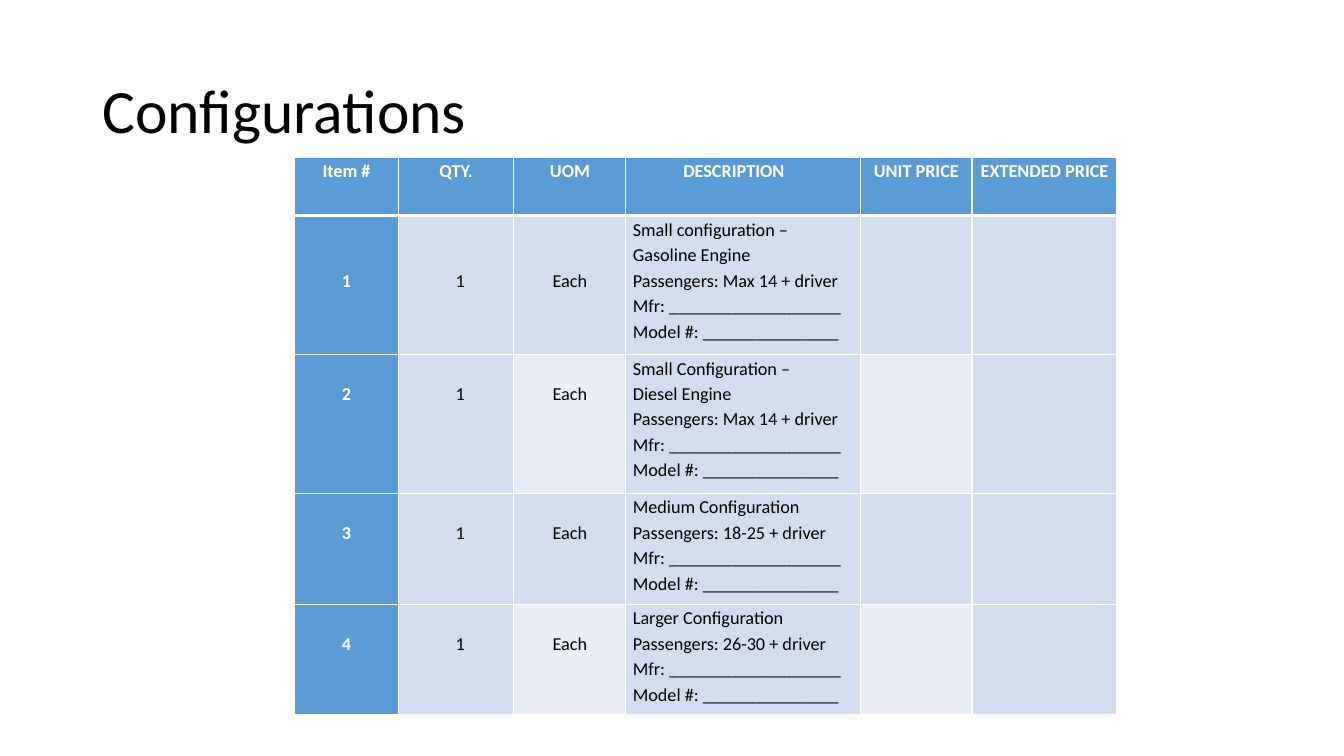
from lxml import etree
from pptx import Presentation
from pptx import util as u
from pptx.dml import color
from pptx.enum import text
from pptx.oxml import ns

BLUE, MID, PALE = "5B9BD5", "D2DEEF", "EAEFF7"
WHITE, BLACK = "FFFFFF", "000000"
LINE = 18.2
INSET = 5.04
INDENT = 36
COLS = [74, 82.6, 80, 167.8, 79.4, 103.7]
ROWS = [41.6, 99.2, 99.2, 79.2, 79.2]
HEADINGS = ["Item #", "QTY.", "UOM", "DESCRIPTION", "UNIT PRICE", "EXTENDED PRICE"]
BLANKS = ["Mfr: ___________________", "Model #: _______________"]
CONFIGURATIONS = [
    ["Small configuration –", "Gasoline Engine", "Passengers: Max 14 + driver"],
    ["Small Configuration –", "Diesel Engine", "Passengers: Max 14 + driver"],
    ["Medium Configuration", "Passengers: 18-25 + driver"],
    ["Larger Configuration", "Passengers: 26-30 + driver"],
]


def rgb(value):
    return color.RGBColor.from_string(value)


class Deck:
    """Hold the presentation, its font and the current slide."""

    def __init__(self, width, height, font):
        self.prs = Presentation()
        self.prs.slide_width, self.prs.slide_height = u.Pt(width), u.Pt(height)
        self.font = font
        self.s = self.prs.slides.add_slide(self.prs.slide_layouts[5])

    def set_text(self, tf, content, size, ink, bold=False, centred=False, spacing=1.0):
        tf.text = content
        for p in tf.paragraphs:
            p.alignment = text.PP_ALIGN.CENTER if centred else text.PP_ALIGN.LEFT
            p.line_spacing = spacing
            for r in p.runs:
                r.font.name, r.font.size, r.font.bold = self.font, u.Pt(size), bold
                r.font.color.rgb = rgb(ink)

    def title(self, content, left, top, width, height):
        sp = self.s.shapes.title
        sp.left, sp.top, sp.width, sp.height = map(u.Pt, (left, top, width, height))
        sp.text_frame.vertical_anchor = text.MSO_ANCHOR.MIDDLE
        self.set_text(sp.text_frame, content, 44, BLACK, spacing=0.9)

    def table(self, left, top, cols, rows):
        box = map(u.Pt, (left, top, sum(cols), sum(rows)))
        table = self.s.shapes.add_table(len(rows), len(cols), *box).table
        for column, width in zip(table.columns, cols):
            column.width = u.Pt(width)
        for row, height in zip(table.rows, rows):
            row.height = u.Pt(height)
        return table

    def borders(self, cell, widths):
        for side, width in widths.items():
            ln = etree.SubElement(cell._tc.get_or_add_tcPr(), ns.qn("a:ln" + side))
            ln.set("w", str(u.Pt(width)))
            fill = etree.SubElement(ln, ns.qn("a:solidFill"))
            etree.SubElement(fill, ns.qn("a:srgbClr")).set("val", WHITE)

    def cell(self, cell, content, fill, widths, bold, centred, indent=0, drop=0):
        self.borders(cell, widths)
        cell.fill.solid()
        cell.fill.fore_color.rgb = rgb(fill)
        cell.margin_left, cell.margin_right = u.Pt(INSET + indent), u.Pt(INSET)
        cell.margin_top, cell.margin_bottom = u.Pt(drop), u.Pt(0)
        ink = WHITE if bold else BLACK
        self.set_text(cell.text_frame, content, 13, ink, bold, centred, 1.15)


def main():
    deck = Deck(960, 540, "Calibri")
    deck.title("Configurations", 66, 28.8, 828, 104.4)
    table = deck.table(210.5, 112.4, COLS, ROWS)
    items = [[str(n), "1", "Each", "\n".join(lines + BLANKS), "", ""]
             for n, lines in enumerate(CONFIGURATIONS, 1)]
    for i, row in enumerate([HEADINGS] + items):
        widths = {"L": 1, "R": 1, "T": 3 if i == 1 else 1, "B": 1 if i else 3}
        for j, content in enumerate(row):
            strong = i == 0 or j == 0
            pale = i % 2 == 0 and j in (2, 4)
            fill = BLUE if strong else PALE if pale else MID
            indented = j == 1 and i > 0 or j == 3 and i == 0
            drop = LINE * (2 if i == 1 else 1) if i and j < 3 else 0
            deck.cell(table.cell(i, j), content, fill, widths, strong,
                      not indented and j != 3, INDENT if indented else 0, drop)
    deck.prs.save("out.pptx")


if __name__ == "__main__":
    main()
